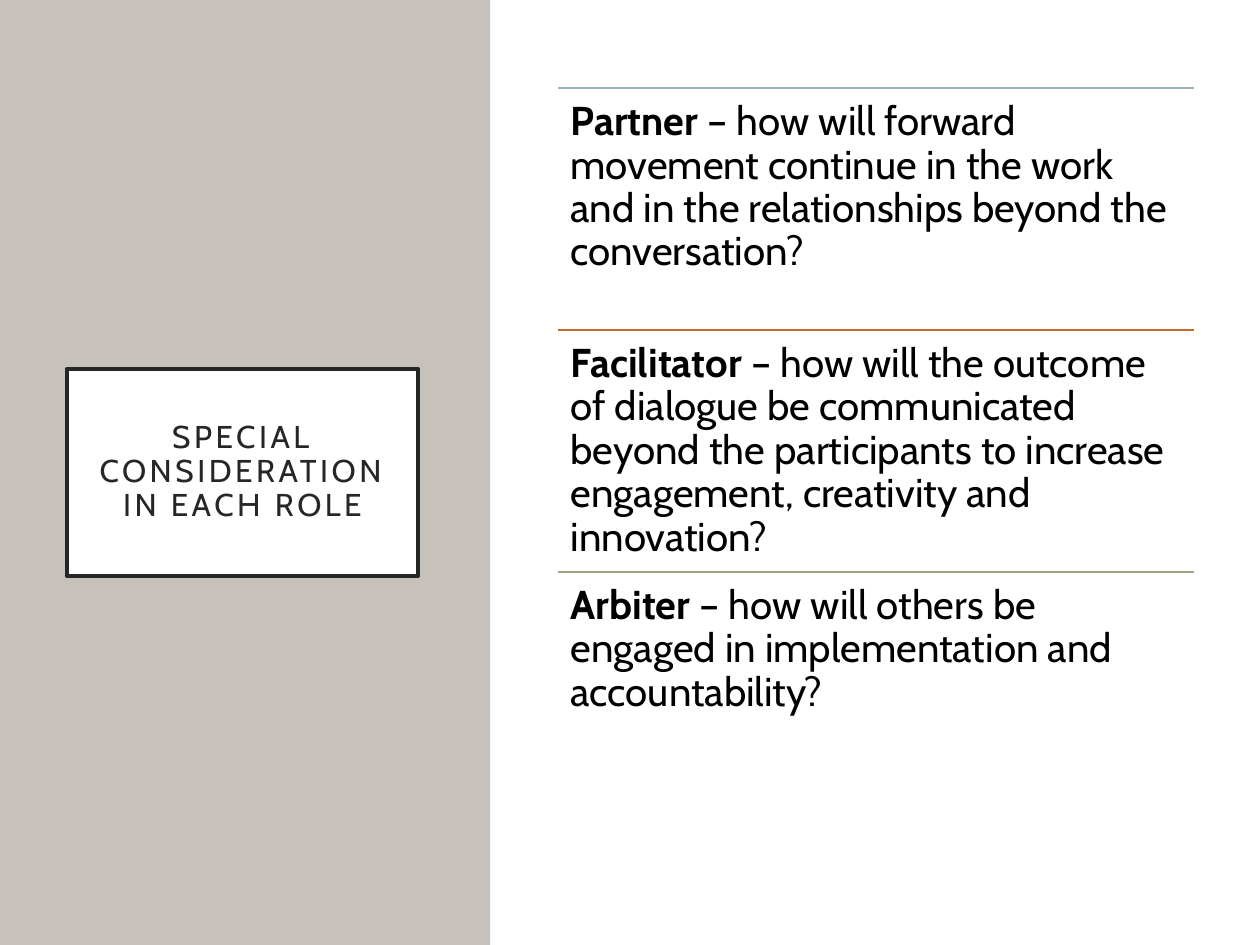
from lxml.etree import SubElement
from pptx import Presentation
from pptx.dml.color import RGBColor
from pptx.enum.shapes import MSO_CONNECTOR, MSO_SHAPE
from pptx.enum.text import MSO_ANCHOR, PP_ALIGN
from pptx.oxml.ns import qn
from pptx.util import Inches, Pt


def color(hex_value):
    return RGBColor.from_string(hex_value)


def add_panel(left, top, width, height, fill):
    panel = slide.shapes.add_shape(
        MSO_SHAPE.RECTANGLE, Inches(left), Inches(top), Inches(width), Inches(height))
    panel.shadow.inherit = False
    panel.fill.solid()
    panel.fill.fore_color.rgb = color(fill)
    panel.line.fill.background()
    return panel


prs = Presentation()
prs.slide_width, prs.slide_height = Inches(10), Inches(7.5)
slide = prs.slides.add_slide(prs.slide_layouts[6])

# Background panels
add_panel(0, 0, 3.89, 7.5, "C6C1BA")
add_panel(3.9, 0, 6.1, 7.5, "FFFFFF")

# Framed title
title = add_panel(0.53, 2.93, 2.79, 1.64, "FFFFFF")
title.line.color.rgb = color("262626")
title.line.width = Pt(2.5)
frame = title.text_frame
frame.text = "SPECIAL CONSIDERATION IN EACH ROLE"
frame.word_wrap = True
frame.vertical_anchor = MSO_ANCHOR.MIDDLE
frame.margin_left = frame.margin_right = Inches(0.2)
frame.margin_top = frame.margin_bottom = Inches(0.2)
heading = frame.paragraphs[0]
heading.alignment = PP_ALIGN.CENTER
heading.line_spacing = 0.9
heading_font = heading.runs[0].font
heading_font.name, heading_font.size = "Cabin", Pt(18)
heading_font.color.rgb = color("262626")
heading.runs[0]._r.get_or_add_rPr().set("spc", "200")

# Roles, each under its own rule
roles = [
    ("Partner", " – how will forward movement continue in the work and in the "
     "relationships beyond the conversation?", "9BAFB5"),
    ("Facilitator", " – how will the outcome of dialogue be communicated beyond the "
     "participants to increase engagement, creativity and innovation?", "C96731"),
    ("Arbiter", " – how will others be engaged in implementation and "
     "accountability?", "9CA383"),
]
left, first_top, width, row_height = 4.43, 0.7, 5.05, 1.92

for index, (role, question, rule_color) in enumerate(roles):
    top = Inches(first_top + index * row_height)
    rule = slide.shapes.add_connector(
        MSO_CONNECTOR.STRAIGHT, Inches(left), top, Inches(left + width), top)
    rule.line.color.rgb = color(rule_color)
    rule.line.width = Pt(1)
    SubElement(rule._element.spPr, qn("a:effectLst"))

    entry = slide.shapes.add_textbox(Inches(left), top, Inches(width), Inches(row_height))
    frame = entry.text_frame
    frame.word_wrap = True
    frame.margin_left = frame.margin_right = Inches(0.1)
    frame.margin_top = frame.margin_bottom = Inches(0.1)
    paragraph = frame.paragraphs[0]
    paragraph.line_spacing = 0.9
    for text, bold in ((role, True), (question, False)):
        run = paragraph.add_run()
        run.text = text
        run.font.name, run.font.size, run.font.bold = "Cabin", Pt(23), bold
        run.font.color.rgb = color("000000")

prs.save("out.pptx")
